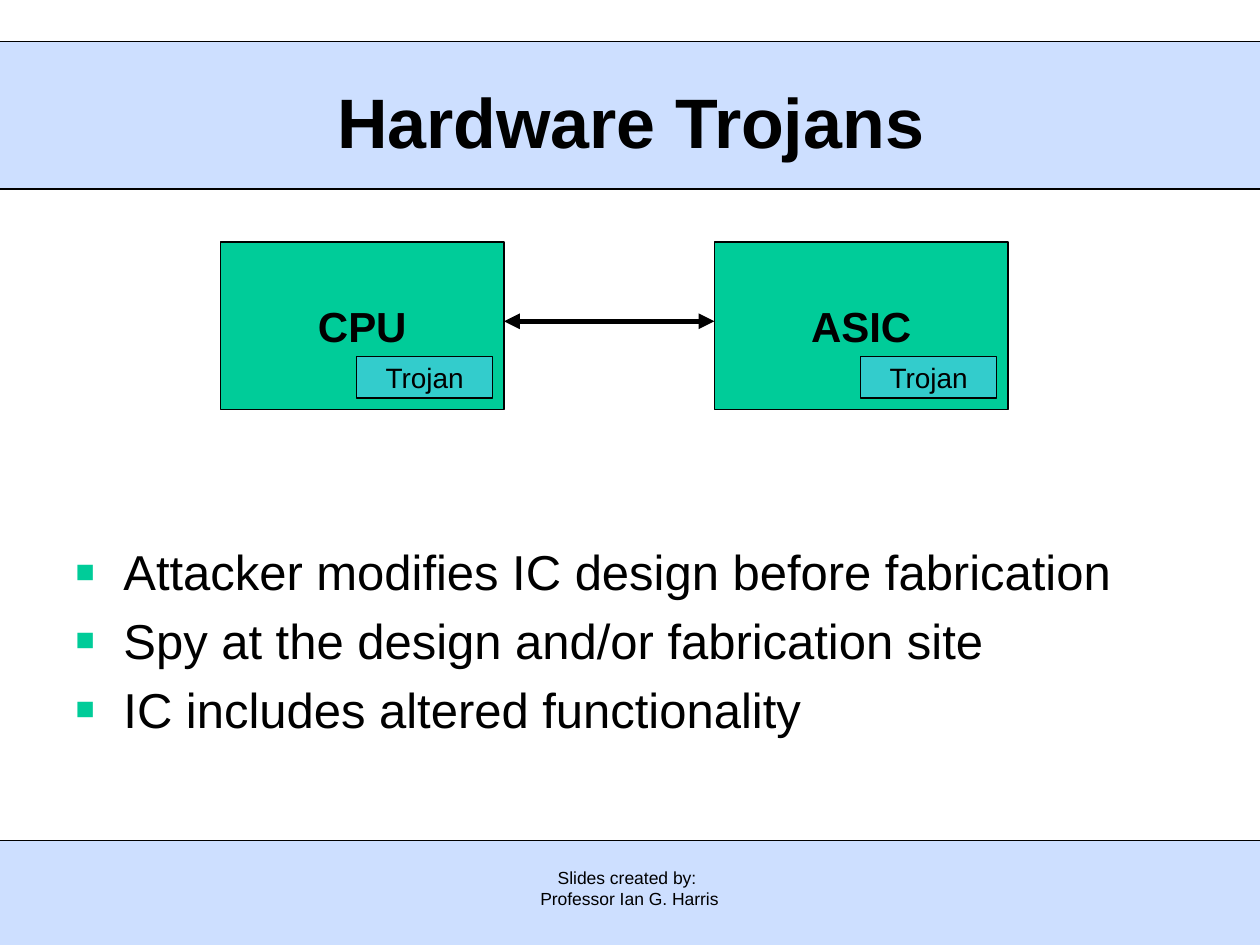
from lxml.etree import SubElement
from pptx import Presentation
from pptx.dml.color import RGBColor
from pptx.enum.shapes import MSO_CONNECTOR as Connector, MSO_SHAPE as Shape
from pptx.enum.text import MSO_ANCHOR as Anchor, MSO_AUTO_SIZE as AutoSize, PP_ALIGN as Align
from pptx.oxml.ns import qn
from pptx.util import Inches, Pt

BLACK = RGBColor(0x00, 0x00, 0x00)
PALE_BLUE = RGBColor(0xCD, 0xDF, 0xFF)
GREEN = RGBColor(0x00, 0xCC, 0x99)
TEAL = RGBColor(0x33, 0xCC, 0xCC)


class SlideBuilder:
    font = "Arial"
    thin = 0.75

    def __init__(self, slide):
        self.slide = slide

    def add_run(self, paragraph, text, size, bold=False):
        run = paragraph.add_run()
        run.text = text
        run.font.name = self.font
        run.font.size = Pt(size)
        run.font.bold = bold
        run.font.color.rgb = BLACK

    def place(self, shape, left, top, width, height):
        shape.left, shape.top = Inches(left), Inches(top)
        shape.width, shape.height = Inches(width), Inches(height)
        shape.text_frame.auto_size = AutoSize.NONE
        shape.element.getparent().append(shape.element)

    def box(self, left, top, width, height, fill, line=BLACK, text=None, size=16, bold=False):
        shape = self.slide.shapes.add_shape(
            Shape.RECTANGLE, Inches(left), Inches(top), Inches(width), Inches(height))
        shape.shadow.inherit = False
        shape.fill.solid()
        shape.fill.fore_color.rgb = fill
        shape.line.color.rgb = line
        shape.line.width = Pt(self.thin)
        if text:
            frame = shape.text_frame
            frame.word_wrap = False
            frame.vertical_anchor = Anchor.MIDDLE
            frame.paragraphs[0].alignment = Align.CENTER
            self.add_run(frame.paragraphs[0], text, size, bold)

    def line(self, start, end, width=thin, arrows=False):
        connector = self.slide.shapes.add_connector(
            Connector.STRAIGHT, *(Inches(value) for value in (*start, *end)))
        connector.line.color.rgb = BLACK
        connector.line.width = Pt(width)
        if arrows:
            outline = connector.line._get_or_add_ln()
            for tag in ("a:headEnd", "a:tailEnd"):
                SubElement(outline, qn(tag), type="triangle")
        SubElement(connector.element.spPr, qn("a:effectLst"))

    def title(self, text, *area):
        shape = self.slide.shapes.title
        self.place(shape, *area)
        shape.text_frame.vertical_anchor = Anchor.MIDDLE
        paragraph = shape.text_frame.paragraphs[0]
        paragraph.alignment = Align.CENTER
        self.add_run(paragraph, text, 40, True)

    def bullets(self, items, *area):
        shape = self.slide.placeholders[1]
        self.place(shape, *area)
        frame = shape.text_frame
        for index, item in enumerate(items):
            paragraph = frame.add_paragraph() if index else frame.paragraphs[0]
            properties = paragraph._p.get_or_add_pPr()
            properties.set("marL", str(Inches(0.38)))
            properties.set("indent", str(Inches(-0.38)))
            color = SubElement(properties, qn("a:buClr"))
            SubElement(color, qn("a:srgbClr"), val=str(GREEN))
            SubElement(properties, qn("a:buSzPct"), val="65000")
            SubElement(properties, qn("a:buFont"), typeface=self.font)
            SubElement(properties, qn("a:buChar"), char="■")
            self.add_run(paragraph, item, 28)

    def caption(self, lines, left, top, width, height):
        shape = self.slide.shapes.add_textbox(
            Inches(left), Inches(top), Inches(width), Inches(height))
        frame = shape.text_frame
        frame.word_wrap = True
        for index, text in enumerate(lines):
            paragraph = frame.add_paragraph() if index else frame.paragraphs[0]
            paragraph.alignment = Align.CENTER
            self.add_run(paragraph, text, 10)


def main():
    presentation = Presentation()
    presentation.slide_width = Inches(10)
    presentation.slide_height = Inches(7.5)
    builder = SlideBuilder(presentation.slides.add_slide(presentation.slide_layouts[1]))

    for top, height in ((6.67, 0.83), (0.33, 1.17)):
        builder.box(0, top, 10, height, PALE_BLUE, PALE_BLUE)
    for top in (0.33, 1.5, 6.67):
        builder.line((0, top), (10, top))
    builder.caption(("Slides created by: ", "Professor Ian G. Harris"), 3.42, 6.83, 3.15, 0.49)

    builder.title("Hardware Trojans", 0.17, 0.33, 9.67, 1.25)
    builder.bullets((
        "Attacker modifies IC design before fabrication",
        "Spy at the design and/or fabrication site",
        "IC includes altered functionality",
    ), 0.5, 4.25, 9, 1.75)

    chips = (("CPU", 1.75, 2.25), ("ASIC", 5.67, 2.33))
    for name, left, width in chips:
        builder.box(left, 1.92, width, 1.33, GREEN, text=name, size=24, bold=True)
        builder.box(left + width - 1.17, 2.83, 1.08, 0.33, TEAL, text="Trojan")
    builder.line((4, 2.55), (5.67, 2.55), width=3, arrows=True)

    presentation.save("out.pptx")


if __name__ == "__main__":
    main()
